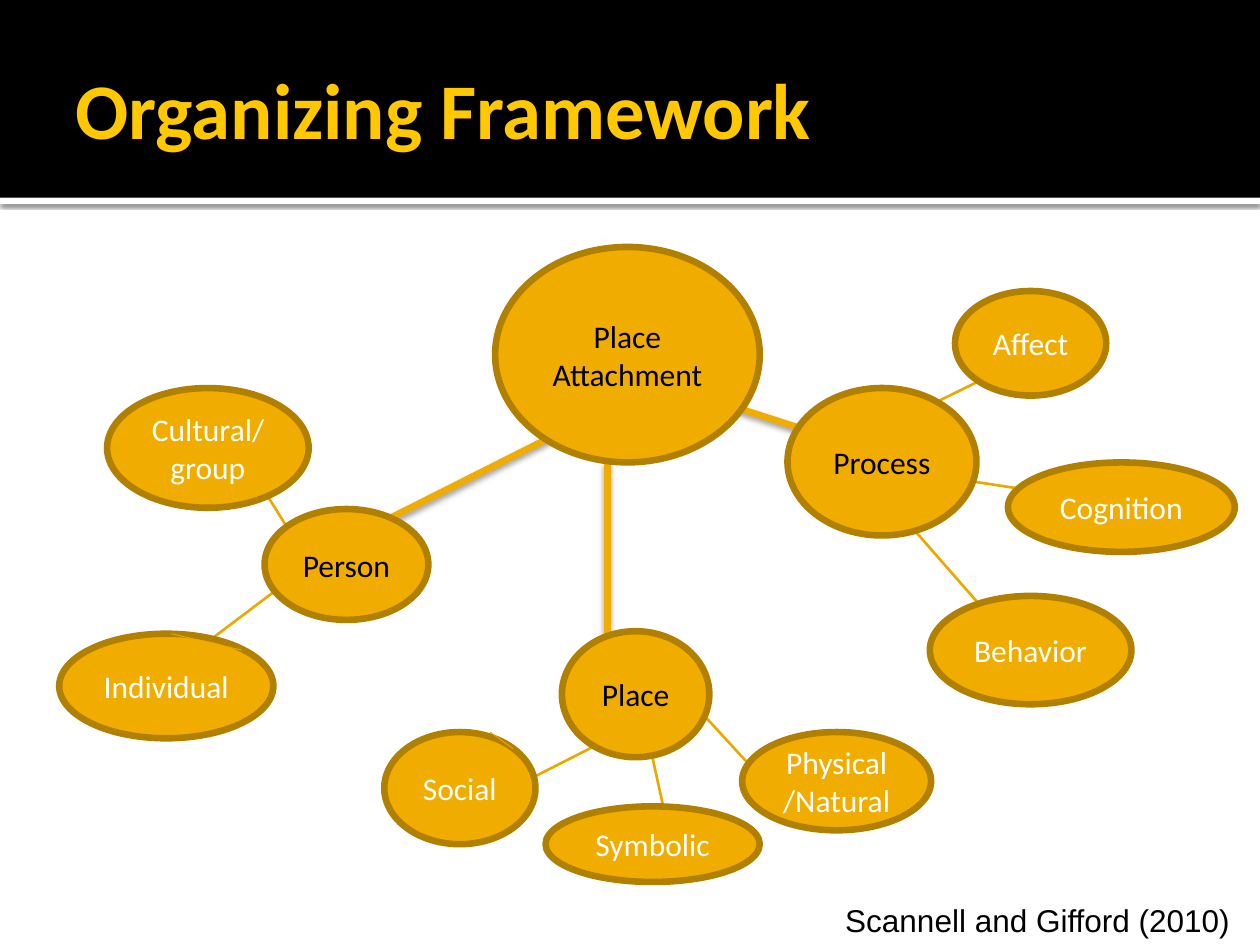
"""Build the Organizing Framework slide: a concept map of place attachment."""
from lxml import etree
from pptx import Presentation
from pptx.dml.color import RGBColor
from pptx.enum.shapes import MSO_CONNECTOR, MSO_SHAPE
from pptx.enum.text import MSO_ANCHOR, MSO_AUTO_SIZE, PP_ALIGN
from pptx.oxml.ns import qn
from pptx.util import Inches, Pt

STRAIGHT = MSO_CONNECTOR.STRAIGHT
RECTANGLE, OVAL = MSO_SHAPE.RECTANGLE, MSO_SHAPE.OVAL
MIDDLE = MSO_ANCHOR.MIDDLE
NO_AUTOFIT = MSO_AUTO_SIZE.NONE
LEFT, CENTER = PP_ALIGN.LEFT, PP_ALIGN.CENTER

BLACK = RGBColor(0x00, 0x00, 0x00)
WHITE = RGBColor(0xFF, 0xFF, 0xFF)
YELLOW = RGBColor(0xFF, 0xC8, 0x00)
AMBER = RGBColor(0xF0, 0xAD, 0x00)
DARK_AMBER = RGBColor(0xB2, 0x80, 0x00)
LINK_AMBER = RGBColor(0xEB, 0xA9, 0x00)


def set_shadow(shape, opacity=0, blur=0, distance=0):
    effects = etree.SubElement(shape._element.spPr, qn("a:effectLst"))
    if opacity:
        shadow = etree.SubElement(
            effects, qn("a:outerShdw"), blurRad=str(Pt(blur)), dist=str(Pt(distance)),
            dir="5400000", algn="tl", rotWithShape="0")
        color = etree.SubElement(shadow, qn("a:srgbClr"), val=str(BLACK))
        etree.SubElement(color, qn("a:alpha"), val=str(opacity * 1000))


def add_link(ends, color, width, shadow=()):
    link = page.shapes.add_connector(STRAIGHT, *[Inches(value) for value in ends])
    link.line.color.rgb = color
    link.line.width = Pt(width)
    set_shadow(link, *shadow)


deck = Presentation()
deck.slide_width, deck.slide_height = Inches(10), Inches(7.5)
page = deck.slides.add_slide(deck.slide_layouts[5])

bands = [(1.57, 0.05, WHITE, (60, 2.5, 0.8)), (0, 1.57, BLACK, ())]
for top, height, color, shadow in bands:
    band = page.shapes.add_shape(RECTANGLE, 0, Inches(top), Inches(10), Inches(height))
    band.fill.solid()
    band.fill.fore_color.rgb = color
    band.line.fill.background()
    set_shadow(band, *shadow)

branch_links = [
    (5.18, 6.02, 5.33, 6.7),
    (7.76, 3.03, 7.25, 3.28),
    (7.58, 3.8, 8.17, 3.89),
    (7.25, 4.2, 7.88, 4.92),
    (5.58, 5.67, 6.03, 6.16),
    (4.82, 5.87, 4.25, 6.16),
    (2.21, 4.67, 1.64, 5.1),
    (2.07, 3.85, 2.35, 4.3),
]
for ends in branch_links:
    add_link(ends, LINK_AMBER, 1.5)

main_links = [
    (5.58, 3.15, 6.42, 3.42),
    (4.47, 3.42, 2.92, 4.2),
    (4.82, 3.67, 4.82, 5.1),
]
for ends in main_links:
    add_link(ends, AMBER, 3.78, (38, 3.5, 2))

title = page.shapes.title
page.shapes._spTree.append(title._element)
title.left, title.top = Inches(0.5), Inches(0.17)
title.width, title.height = Inches(9), Inches(1.37)
frame = title.text_frame
frame.text = "Organizing Framework"
frame.auto_size = NO_AUTOFIT
frame.vertical_anchor = MIDDLE
frame.margin_left = Inches(0.1)
frame.margin_top = frame.margin_right = frame.margin_bottom = Inches(0.05)
para = frame.paragraphs[0]
para.alignment = LEFT
para.font.name, para.font.size, para.font.bold = "Calibri", Pt(45), True
para.font.color.rgb = YELLOW

concepts = [
    ("Place Attachment", 3.93, 1.96, 2.1, 1.71, BLACK),
    ("Person", 2.1, 4.04, 1.3, 0.88, BLACK),
    ("Place", 4.46, 5.01, 1.17, 1, BLACK),
    ("Process", 6.25, 3.08, 1.5, 1.17, BLACK),
    ("Cultural/group", 0.85, 3.08, 1.6, 0.95, WHITE),
    ("Individual", 0.47, 5.03, 1.7, 0.83, WHITE),
    ("Social", 3.05, 5.81, 1.2, 0.89, WHITE),
    ("Physical/Natural", 5.89, 5.81, 1.5, 0.78, WHITE),
    ("Affect", 7.58, 2.31, 1.2, 0.83, WHITE),
    ("Cognition", 8, 3.67, 1.8, 0.71, WHITE),
    ("Behavior", 7.38, 4.73, 1.6, 0.86, WHITE),
    ("Symbolic", 4.33, 6.4, 1.7, 0.6, WHITE),
]
for label, left, top, width, height, color in concepts:
    oval = page.shapes.add_shape(
        OVAL, Inches(left), Inches(top), Inches(width), Inches(height))
    oval.fill.solid()
    oval.fill.fore_color.rgb = AMBER
    oval.line.color.rgb = DARK_AMBER
    oval.line.width = Pt(3.78)
    oval.shadow.inherit = False
    oval.text_frame.text = label
    oval.text_frame.word_wrap = True
    oval.text_frame.vertical_anchor = MIDDLE
    para = oval.text_frame.paragraphs[0]
    para.alignment = CENTER
    para.font.name, para.font.size = "Calibri", Pt(18)
    para.font.color.rgb = color

for ends in [(1.36, 5.03, 1.92, 5.16), (3.89, 5.81, 4.07, 5.94)]:
    add_link(ends, LINK_AMBER, 0.5)

box = page.shapes.add_textbox(Inches(6.61), Inches(7.1), Inches(3.39), Inches(0.4))
box.text_frame.text = "Scannell and Gifford (2010)"
box.text_frame.word_wrap = True
para = box.text_frame.paragraphs[0]
para.font.name, para.font.size = "Arial", Pt(18)
para.font.color.rgb = BLACK

deck.save("out.pptx")
